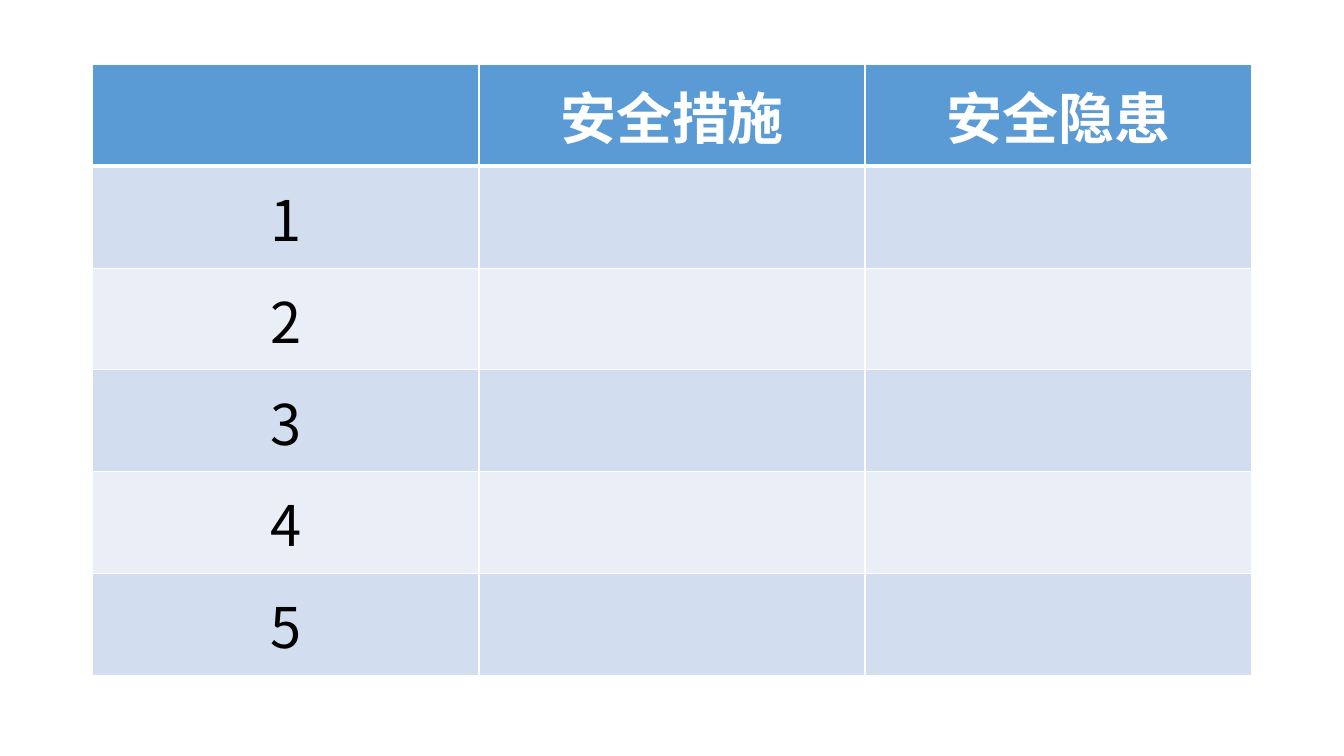
"""Build a slide with a table of safety measures and hazards."""
from lxml.etree import SubElement
from pptx import Presentation
from pptx.dml.color import RGBColor
from pptx.enum.text import MSO_ANCHOR as ANCHOR, PP_ALIGN as ALIGN
from pptx.oxml.ns import qn
from pptx.util import Inches, Pt

WHITE = RGBColor(0xFF, 0xFF, 0xFF)
BLACK = RGBColor(0, 0, 0)
HEADER_BLUE = RGBColor(0x5B, 0x9B, 0xD5)
BANDS = (RGBColor(0xEA, 0xEF, 0xF7), RGBColor(0xD2, 0xDE, 0xEF))
FONT = "Noto Sans CJK SC"
ROWS = [["", "安全措施", "安全隐患"]] + [[str(n), "", ""] for n in range(1, 6)]
LEFT, TOP, COL_W, ROW_H = 0.92, 0.64, 3.83, 1.01


def set_border(cell, side, points):
    ln = SubElement(cell._tc.get_or_add_tcPr(), qn(f"a:ln{side}"), w=str(Pt(points)))
    fill = SubElement(ln, qn("a:solidFill"))
    SubElement(fill, qn("a:srgbClr"), val=str(WHITE))


def write_text(cell, text, color, bold):
    cell.vertical_anchor = ANCHOR.MIDDLE
    p = cell.text_frame.paragraphs[0]
    p.text = text
    p.alignment = ALIGN.CENTER
    for r in p.runs:
        r.font.size = Pt(40)
        r.font.bold = bold
        r.font.color.rgb = color
        r.font.name = FONT
        SubElement(r.font._element, qn("a:ea"), typeface=FONT)


def format_cell(cell, row, text):
    header = row == 0
    for side in "LRTB":
        thick = (row, side) in ((0, "B"), (1, "T"))
        set_border(cell, side, 3 if thick else 1)
    cell.fill.solid()
    cell.fill.fore_color.rgb = HEADER_BLUE if header else BANDS[row % 2]
    write_text(cell, text, WHITE if header else BLACK, header)


def add_safety_table(slide):
    n_rows, n_cols = len(ROWS), len(ROWS[0])
    table = slide.shapes.add_table(
        n_rows, n_cols, Inches(LEFT), Inches(TOP),
        Inches(COL_W * n_cols), Inches(ROW_H * n_rows)).table
    for i, texts in enumerate(ROWS):
        for j, text in enumerate(texts):
            format_cell(table.cell(i, j), i, text)


def main():
    prs = Presentation()
    prs.slide_width, prs.slide_height = Inches(13.33), Inches(7.5)
    slide = prs.slides.add_slide(prs.slide_layouts[6])
    add_safety_table(slide)
    prs.save("out.pptx")


if __name__ == "__main__":
    main()
